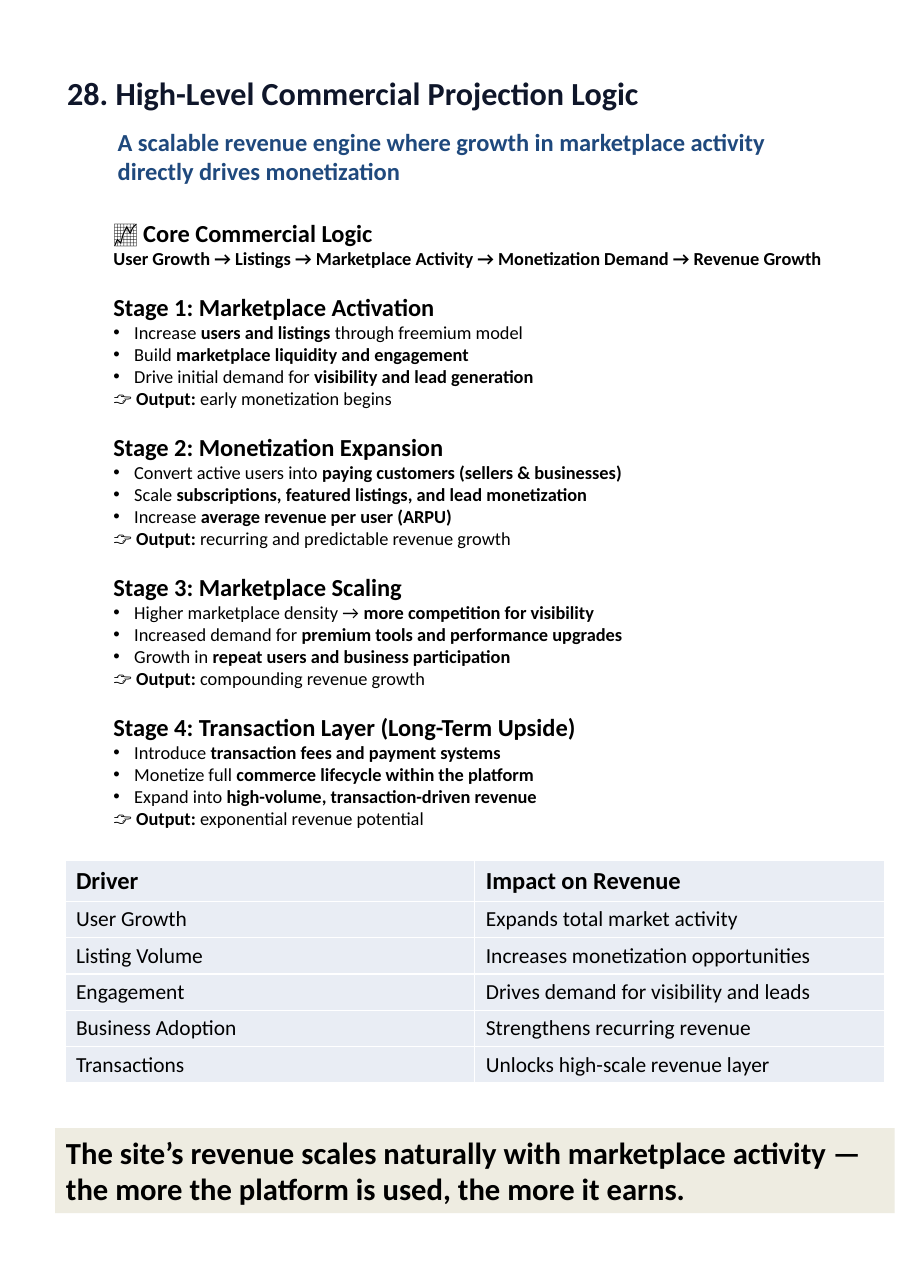
"""Build the one-page commercial projection slide."""
from dataclasses import dataclass

from lxml.etree import SubElement
from pptx import Presentation
from pptx.dml.color import RGBColor
from pptx.enum.shapes import MSO_SHAPE
from pptx.enum.text import MSO_ANCHOR, MSO_AUTO_SIZE, PP_ALIGN
from pptx.oxml.ns import qn
from pptx.util import Emu, Pt

NAVY = RGBColor(0x0F, 0x16, 0x2A)
BLUE = RGBColor(0x1F, 0x49, 0x7D)
BLACK = RGBColor(0x00, 0x00, 0x00)
ROW_TINT = RGBColor(0xE9, 0xED, 0xF4)
SAND = RGBColor(0xEE, 0xEC, 0xE1)
WHITE = RGBColor(0xFF, 0xFF, 0xFF)
FONT = "Calibri"
BULLET_INDENT = 19
STAGE_GAP = 14.65


@dataclass(frozen=True)
class Box:
    """Hold a position and size in px."""

    left: int
    top: int
    width: int
    height: int

    def emu(self) -> tuple[Emu, ...]:
        """Return the four lengths in EMU."""
        return tuple(map(px, (self.left, self.top, self.width, self.height)))


@dataclass(frozen=True)
class Stage:
    """Hold one growth stage; ** marks its bold words."""

    heading: str
    actions: tuple[str, ...]
    output: str


STAGES = (
    Stage("Stage 1: Marketplace Activation",
          ("Increase **users and listings** through freemium model",
           "Build **marketplace liquidity and engagement**",
           "Drive initial demand for **visibility and lead generation**"),
          "early monetization begins"),
    Stage("Stage 2: Monetization Expansion",
          ("Convert active users into **paying customers (sellers & businesses)**",
           "Scale **subscriptions, featured listings, and lead monetization**",
           "Increase **average revenue per user (ARPU)**"),
          "recurring and predictable revenue growth"),
    Stage("Stage 3: Marketplace Scaling",
          ("Higher marketplace density → **more competition for visibility**",
           "Increased demand for **premium tools and performance upgrades**",
           "Growth in **repeat users and business participation**"),
          "compounding revenue growth"),
    Stage("Stage 4: Transaction Layer (Long-Term Upside)",
          ("Introduce **transaction fees and payment systems**",
           "Monetize full **commerce lifecycle within the platform**",
           "Expand into **high-volume, transaction-driven revenue**"),
          "exponential revenue potential"),
)

DRIVERS = (
    ("Driver", "Impact on Revenue"),
    ("User Growth", "Expands total market activity"),
    ("Listing Volume", "Increases monetization opportunities"),
    ("Engagement", "Drives demand for visibility and leads"),
    ("Business Adoption", "Strengthens recurring revenue"),
    ("Transactions", "Unlocks high-scale revenue layer"),
)


def px(length: int) -> Emu:
    """Convert px to EMU at 100 px to the inch."""
    return Emu(length * 9144)


def write(frame, text: str, *, size: int, color: RGBColor = BLACK,
          bold: bool = False, bullet: bool = False, before: float = 0) -> None:
    """Add a paragraph to a frame, with ** switching to bold."""
    paragraph = frame.paragraphs[0]
    if paragraph.runs:
        paragraph = frame.add_paragraph()
    if bullet:
        properties = paragraph._p.get_or_add_pPr()
        properties.set("marL", str(px(BULLET_INDENT)))
        properties.set("indent", str(-px(BULLET_INDENT)))
        SubElement(properties, qn("a:buFont"), typeface="Arial")
        SubElement(properties, qn("a:buChar"), char="•")
    paragraph.alignment = PP_ALIGN.LEFT
    if before:
        paragraph.space_before = Pt(before)
    for index, words in enumerate(text.split("**")):
        if words:
            run = paragraph.add_run()
            run.text = words
            run.font.name = FONT
            run.font.size = Pt(size)
            run.font.bold = bold or index % 2 == 1
            run.font.color.rgb = color


def add_frame(slide, box: Box):
    """Add a wrapping text box and return its frame."""
    frame = slide.shapes.add_textbox(*box.emu()).text_frame
    frame.word_wrap = True
    frame.auto_size = MSO_AUTO_SIZE.SHAPE_TO_FIT_TEXT
    return frame


def add_heading(slide) -> None:
    """Add the title and subtitle."""
    title = add_frame(slide, Box(60, 65, 612, 38))
    title.margin_left = px(1)
    title.margin_right = title.margin_bottom = 0
    title.margin_top = px(2)
    write(title, "28. High-Level Commercial Projection Logic",
          size=21, color=NAVY, bold=True)
    write(add_frame(slide, Box(97, 110, 675, 64)),
          "A scalable revenue engine where growth in marketplace activity "
          "directly drives monetization", size=16, color=BLUE, bold=True)


def add_stages(slide) -> None:
    """Add the core logic and the four stages."""
    frame = add_frame(slide, Box(93, 193, 708, 569))
    write(frame, "📈 Core Commercial Logic", size=16, bold=True)
    write(frame, "User Growth → Listings → Marketplace Activity → "
          "Monetization Demand → Revenue Growth", size=12, bold=True)
    for stage in STAGES:
        write(frame, stage.heading, size=16, bold=True, before=STAGE_GAP)
        for action in stage.actions:
            write(frame, action, size=12, bullet=True)
        write(frame, f"👉 **Output:** {stage.output}", size=12)


def add_borders(cell) -> None:
    """Draw thin white lines around a cell."""
    properties = cell._tc.get_or_add_tcPr()
    for index, side in enumerate(("lnL", "lnR", "lnT", "lnB")):
        line = properties.makeelement(qn(f"a:{side}"), {"w": str(Pt(1))})
        fill = SubElement(line, qn("a:solidFill"))
        SubElement(fill, qn("a:srgbClr"), val=str(WHITE))
        properties.insert(index, line)


def add_drivers(slide) -> None:
    """Add the table of revenue drivers."""
    table = slide.shapes.add_table(
        len(DRIVERS), 2, *Box(59, 781, 744, 202).emu()).table
    table.first_row = table.horz_banding = False
    for row_index, texts in enumerate(DRIVERS):
        header = row_index == 0
        table.rows[row_index].height = px(37 if header else 33)
        for column_index, text in enumerate(texts):
            cell = table.cell(row_index, column_index)
            cell.vertical_anchor = MSO_ANCHOR.MIDDLE
            cell.margin_top = cell.margin_bottom = px(4)
            cell.fill.solid()
            cell.fill.fore_color.rgb = ROW_TINT
            add_borders(cell)
            write(cell.text_frame, text, size=16 if header else 14, bold=header)


def add_takeaway(slide) -> None:
    """Add the closing statement."""
    banner = slide.shapes.add_shape(
        MSO_SHAPE.RECTANGLE, *Box(50, 1024, 762, 77).emu())
    banner.shadow.inherit = False
    banner.fill.solid()
    banner.fill.fore_color.rgb = SAND
    banner.line.fill.background()
    frame = banner.text_frame
    frame.word_wrap = True
    frame.auto_size = MSO_AUTO_SIZE.SHAPE_TO_FIT_TEXT
    frame.vertical_anchor = MSO_ANCHOR.TOP
    write(frame, "The site’s revenue scales naturally with marketplace activity — "
          "the more the platform is used, the more it earns.", size=20, bold=True)


def main() -> None:
    """Build and save the presentation."""
    presentation = Presentation()
    presentation.slide_width = px(826)
    presentation.slide_height = px(1169)
    slide = presentation.slides.add_slide(presentation.slide_layouts[6])
    add_heading(slide)
    add_stages(slide)
    add_drivers(slide)
    add_takeaway(slide)
    presentation.save("out.pptx")


if __name__ == "__main__":
    main()
